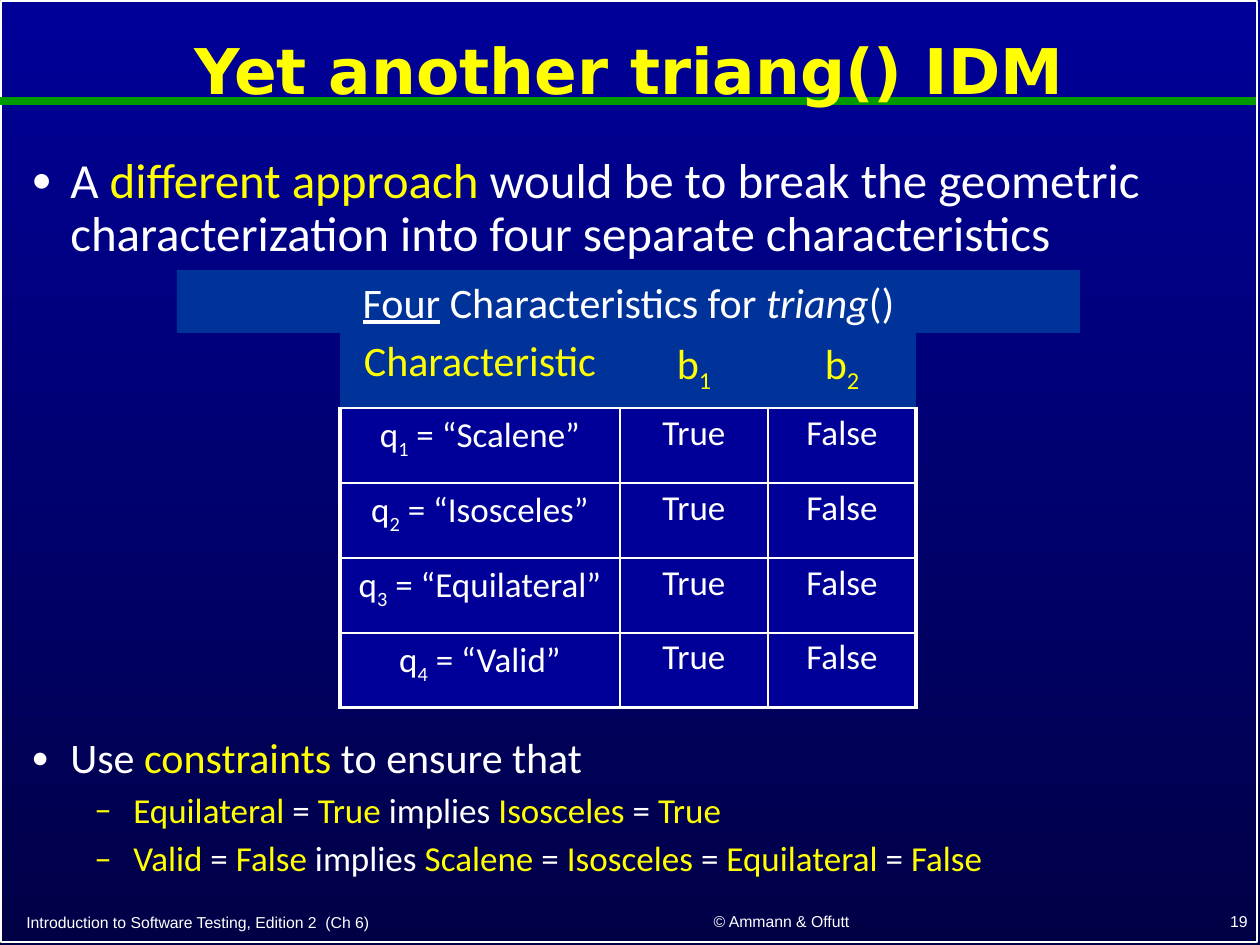
import pptx
import pptx.dml.color
import pptx.enum.shapes
import pptx.enum.text
import pptx.util
from lxml import etree
import pptx.oxml.ns

RGB = pptx.dml.color.RGBColor
ALIGN = pptx.enum.text.PP_ALIGN
ANCHOR = pptx.enum.text.MSO_ANCHOR
SHAPE = pptx.enum.shapes.MSO_SHAPE
qn = pptx.oxml.ns.qn
Pt = pptx.util.Pt

WHITE = RGB(0xFF, 0xFF, 0xFF)
YELLOW = RGB(0xFF, 0xFF, 0x00)
GREEN = RGB(0x00, 0x99, 0x00)
BANNER_BLUE = RGB(0x00, 0x33, 0x99)
NAVY = RGB(0x00, 0x00, 0x99)
MIDNIGHT = RGB(0x00, 0x00, 0x47)

PX = pptx.util.Inches(1) / 126
HIGHLIGHT = {"color": YELLOW}
SUBSCRIPT = {"baseline": -25000}


def px(length):
    return round(length * PX)


def alternate(text, emphasis):
    parts = enumerate(text.split("|"))
    return [(part, emphasis if i % 2 else {}) for i, part in parts if part]


class Deck:
    font = "Calibri"
    color = WHITE

    def __init__(self):
        self.presentation = pptx.Presentation()
        self.presentation.slide_width = px(1260)
        self.presentation.slide_height = px(945)
        self.slide = self.presentation.slides.add_slide(
            self.presentation.slide_layouts[6])

    def background(self, *colors):
        fill = self.slide.background.fill
        fill.gradient()
        fill.gradient_angle = 270
        for position, (stop, color) in enumerate(zip(fill.gradient_stops, colors)):
            stop.color.rgb = color
            stop.position = position

    def add_runs(self, paragraph, runs, size, align=ALIGN.LEFT, spacing=0.9, before=0.3, **base):
        layout = {"alignment": align, "line_spacing": spacing, "space_before": Pt(size * before)}
        for name, value in layout.items():
            setattr(paragraph, name, value)
        for text, emphasis in runs:
            style = {"name": self.font, "size": Pt(size), "color": self.color, **base, **emphasis}
            color = style.pop("color")
            baseline = style.pop("baseline", None)
            run = paragraph.add_run()
            run.text = text
            run.font.color.rgb = color
            for name, value in style.items():
                setattr(run.font, name, value)
            if baseline:
                run._r.get_or_add_rPr().set("baseline", str(baseline))

    def bullet(self, paragraph, mark, left, percent=100):
        properties = paragraph._p.get_or_add_pPr()
        properties.set("marL", str(px(left)))
        properties.set("indent", str(px(-39)))
        etree.SubElement(properties, qn("a:buSzPct")).set("val", str(percent * 1000))
        etree.SubElement(properties, qn("a:buFont")).set("typeface", self.font)
        etree.SubElement(properties, qn("a:buChar")).set("char", mark)

    def rectangle(self, box, fill=None, outline=None):
        shape = self.slide.shapes.add_shape(SHAPE.RECTANGLE, *map(px, box))
        shape.shadow.inherit = False
        if fill:
            shape.fill.solid()
            shape.fill.fore_color.rgb = fill
        else:
            shape.fill.background()
        if outline:
            shape.line.color.rgb = outline
            shape.line.width = Pt(1)
        else:
            shape.line.fill.background()
        return shape

    def rule(self, start, end, color, width):
        line = self.slide.shapes.add_connector(
            pptx.enum.shapes.MSO_CONNECTOR.STRAIGHT, *map(px, start + end))
        line.line.color.rgb = color
        line.line.width = Pt(width)
        etree.SubElement(line._element.spPr, qn("a:effectLst"))

    def text_frame(self, box, anchor=ANCHOR.TOP, wrap=True):
        frame = self.slide.shapes.add_textbox(*map(px, box)).text_frame
        frame.word_wrap = wrap
        frame.vertical_anchor = anchor
        return frame

    def label(self, box, text, size, align, anchor, wrap=True, **style):
        frame = self.text_frame(box, anchor, wrap)
        self.add_runs(frame.paragraphs[0], [(text, {})], size, align, before=0, **style)

    def footer(self, box, text, align):
        self.label(box, text, 9, align, ANCHOR.BOTTOM, wrap=False, name="Arial")

    def bullets(self, box, items):
        frame = self.text_frame(box)
        for i, (text, size, mark, left, percent) in enumerate(items):
            paragraph = frame.add_paragraph() if i else frame.paragraphs[0]
            self.add_runs(paragraph, alternate(text, HIGHLIGHT), size)
            self.bullet(paragraph, mark, left, percent)

    def borders(self, cell, widths):
        properties = cell._tc.get_or_add_tcPr()
        for i, (side, width) in enumerate(zip("LRTB", widths)):
            line = etree.Element(qn(f"a:ln{side}"), w=str(Pt(width)))
            if width:
                fill = etree.SubElement(line, qn("a:solidFill"))
                etree.SubElement(fill, qn("a:srgbClr")).set("val", str(WHITE))
            else:
                etree.SubElement(line, qn("a:noFill"))
            properties.insert(i, line)

    def table(self, left, top, widths, row_height, rows):
        last_row, last_column = len(rows) - 1, len(widths) - 1
        table = self.slide.shapes.add_table(
            len(rows), len(widths), px(left), px(top),
            px(sum(widths)), px(row_height * len(rows))).table
        table.first_row = table.horz_banding = False
        for column, width in zip(table.columns, widths):
            column.width = px(width)
        for r, texts in enumerate(rows):
            table.rows[r].height = px(row_height)
            for c, text in enumerate(texts):
                cell = table.cell(r, c)
                cell.fill.solid()
                cell.fill.fore_color.rgb = NAVY if r else BANNER_BLUE
                self.add_runs(cell.text_frame.paragraphs[0], alternate(text, SUBSCRIPT),
                              20 if r else 24, ALIGN.CENTER, color=WHITE if r else YELLOW)
                body = (2.25 if c == 0 else 1, 2.25 if c == last_column else 1,
                        1, 2.25 if r == last_row else 1)
                self.borders(cell, body if r else (0, 0, 0, 1))


def main():
    deck = Deck()
    deck.background(NAVY, MIDNIGHT)
    deck.rectangle((1, 1, 1256, 941), outline=WHITE)
    deck.rule((0, 101), (1256, 101), GREEN, 4.5)
    deck.footer((582, 903, 399, 34), "© Ammann & Offutt", ALIGN.CENTER)
    deck.footer((998, 902, 262, 35), "19", ALIGN.RIGHT)
    deck.footer((14, 905, 543, 33), "Introduction to Software Testing, Edition 2  (Ch 6)", ALIGN.LEFT)
    deck.label((1, 14, 1256, 120), "Yet another triang() IDM", 36, ALIGN.CENTER,
               ANCHOR.MIDDLE, name="DejaVu Sans", bold=True, color=YELLOW)

    deck.bullets((19, 150, 1221, 116), [
        ("A |different approach| would be to break the geometric "
         "characterization into four separate characteristics", 28, "•", 39, 85)])

    banner = deck.rectangle((177, 270, 903, 63), fill=BANNER_BLUE)
    deck.add_runs(banner.text_frame.paragraphs[0], [
        ("Four", {"underline": True}), (" Characteristics for ", {}),
        ("triang", {"italic": True}), ("()", {})], 24, ALIGN.CENTER, spacing=1, before=0.5)
    banner.text_frame.vertical_anchor = ANCHOR.TOP

    kinds = ("Scalene", "Isosceles", "Equilateral", "Valid")
    characteristics = [(f"q|{i}| = “{kind}”", "True", "False")
                       for i, kind in enumerate(kinds, 1)]
    deck.table(340, 333, (280, 148, 148), 75,
               [("Characteristic", "b|1|", "b|2|"), *characteristics])

    deck.bullets((19, 731, 1221, 150), [
        ("Use |constraints| to ensure that", 24, "•", 39, 85),
        ("|Equilateral| = |True| implies |Isosceles| = |True|", 20, "–", 102, 100),
        ("|Valid| = |False| implies |Scalene| = |Isosceles| = |Equilateral| = |False|",
         20, "–", 102, 100)])

    deck.presentation.save("out.pptx")


if __name__ == "__main__":
    main()
